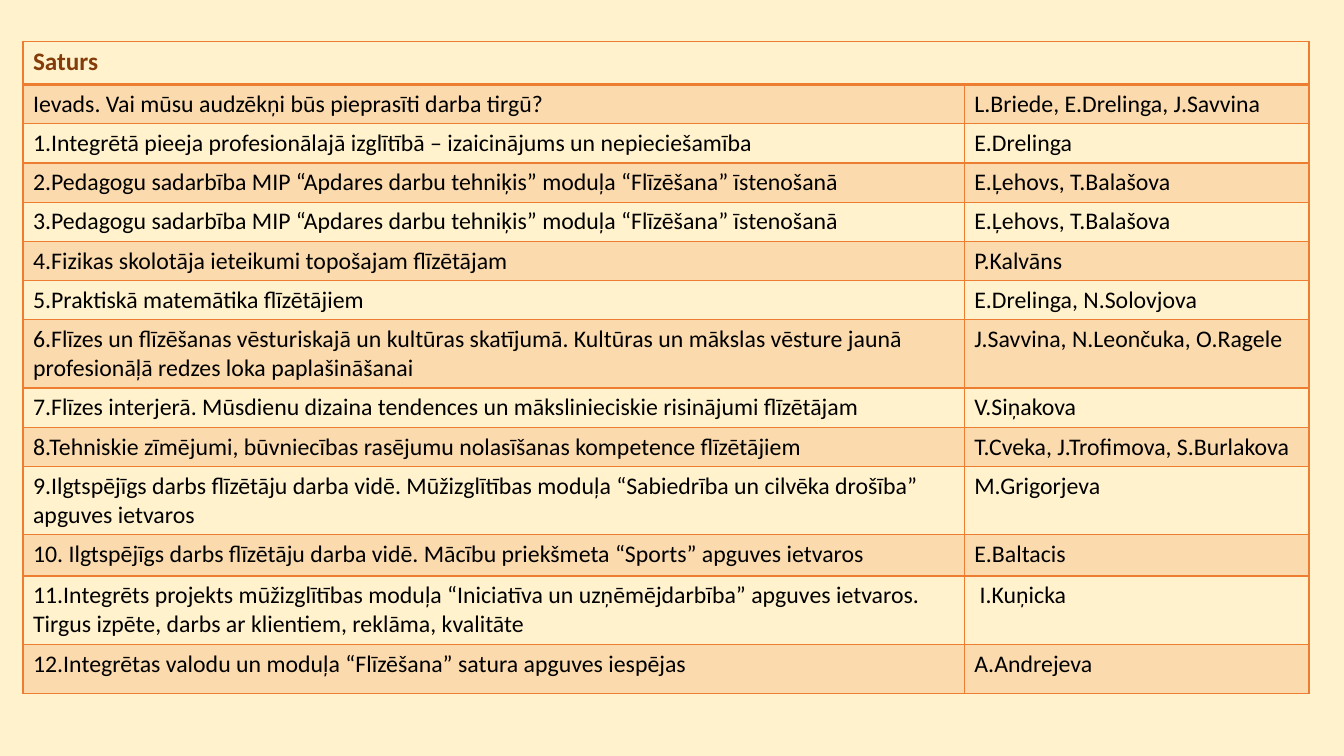
"""Build the contents slide: a two-column table of chapters and authors."""
from lxml import etree
from pptx import Presentation
from pptx.dml.color import RGBColor
from pptx.oxml import ns
from pptx.util import Cm, Pt

COLORS = {"paper": "FFF2CC", "accent": "ED7D31", "title": "843C0B", "body": "000000"}
TITLE = "Saturs"
CHAPTERS = [
    ("Ievads. Vai mūsu audzēkņi būs pieprasīti darba tirgū?", "L.Briede, E.Drelinga, J.Savvina"),
    ("1.Integrētā pieeja profesionālajā izglītībā – izaicinājums un nepieciešamība", "E.Drelinga"),
    ("2.Pedagogu sadarbība MIP “Apdares darbu tehniķis” moduļa “Flīzēšana” īstenošanā",
     "E.Ļehovs, T.Balašova"),
    ("3.Pedagogu sadarbība MIP “Apdares darbu tehniķis” moduļa “Flīzēšana” īstenošanā",
     "E.Ļehovs, T.Balašova"),
    ("4.Fizikas skolotāja ieteikumi topošajam flīzētājam", "P.Kalvāns"),
    ("5.Praktiskā matemātika flīzētājiem", "E.Drelinga, N.Solovjova"),
    ("6.Flīzes un flīzēšanas vēsturiskajā un kultūras skatījumā. Kultūras un mākslas vēsture "
     "jaunā profesionāļā redzes loka paplašināšanai", "J.Savvina, N.Leončuka, O.Ragele"),
    ("7.Flīzes interjerā. Mūsdienu dizaina tendences un mākslinieciskie risinājumi flīzētājam",
     "V.Siņakova"),
    ("8.Tehniskie zīmējumi, būvniecības rasējumu nolasīšanas kompetence flīzētājiem",
     "T.Cveka, J.Trofimova, S.Burlakova"),
    ("9.Ilgtspējīgs darbs flīzētāju darba vidē. Mūžizglītības moduļa “Sabiedrība un cilvēka "
     "drošība” apguves ietvaros", "M.Grigorjeva"),
    ("10. Ilgtspējīgs darbs flīzētāju darba vidē. Mācību priekšmeta “Sports” apguves ietvaros",
     "E.Baltacis"),
    ("11.Integrēts projekts mūžizglītības moduļa “Iniciatīva un uzņēmējdarbība” apguves "
     "ietvaros. Tirgus izpēte, darbs ar klientiem, reklāma, kvalitāte", " I.Kuņicka"),
    ("12.Integrētas valodu un moduļa “Flīzēšana” satura apguves iespējas", "A.Andrejeva"),
]
LEFT, TOP = 0.58, 1.04
COL_WIDTHS = [23.72, 8.69]
LINE_HEIGHT = 0.91
TALL_ROWS = {0: 1.09, 7: 1.63, 10: 1.57, 11: 1.04, 12: 1.57, 13: 1.24}
TITLE_FONT = {"name": "Calibri", "size": Pt(18), "bold": True}
BODY_FONT = {"name": "Calibri", "size": Pt(17), "bold": False}


def rgb(key):
    """Return the named colour."""
    return RGBColor.from_string(COLORS[key])


def add_borders(cell, widths):
    """Draw accent lines on the cell's sides, widths in points."""
    tc_pr = cell._tc.get_or_add_tcPr()
    for side, width in widths.items():
        ln = etree.SubElement(tc_pr, ns.qn(f"a:ln{side}"), w=str(Pt(width)))
        fill = etree.SubElement(ln, ns.qn("a:solidFill"))
        etree.SubElement(fill, ns.qn("a:srgbClr"), val=COLORS["accent"])


def fill_cell(cell, banded):
    """Tint a banded cell and leave the others clear."""
    if not banded:
        cell.fill.background()
        return
    cell.fill.solid()
    cell.fill.fore_color.rgb = rgb("accent")
    color = cell._tc.tcPr.find(".//" + ns.qn("a:solidFill") + "[last()]")
    color = cell._tc.tcPr.find(ns.qn("a:solidFill"))[0]
    etree.SubElement(color, ns.qn("a:alpha"), val="20000")


def write_cell(cell, words, font, color):
    """Write one run of formatted text."""
    r = cell.text_frame.paragraphs[0].add_run()
    r.text = words
    for name, value in font.items():
        setattr(r.font, name, value)
    r.font.color.rgb = rgb(color)


def main():
    """Create and save the slide."""
    prs = Presentation()
    prs.slide_width, prs.slide_height = Cm(33.87), Cm(19.05)
    s = prs.slides.add_slide(prs.slide_layouts[6])
    s.background.fill.solid()
    s.background.fill.fore_color.rgb = rgb("paper")

    rows = [(TITLE, "")] + CHAPTERS
    heights = [TALL_ROWS.get(i, LINE_HEIGHT) for i in range(len(rows))]
    table = s.shapes.add_table(len(rows), len(COL_WIDTHS), Cm(LEFT), Cm(TOP),
                               Cm(sum(COL_WIDTHS)), Cm(sum(heights))).table
    table.first_row = table.horz_banding = False
    for col, width in zip(table.columns, COL_WIDTHS):
        col.width = Cm(width)
    table.cell(0, 0).merge(table.cell(0, 1))

    for i, (row, height, entry) in enumerate(zip(table.rows, heights, rows)):
        row.height = Cm(height)
        font, color = (BODY_FONT, "body") if i else (TITLE_FONT, "title")
        for cell, words in zip(row.cells, entry):
            add_borders(cell, {"L": 1, "R": 1, "T": 1, "B": 1 if i else 2})
            fill_cell(cell, i % 2 == 1)
            if words:
                write_cell(cell, words, font, color)

    prs.save("out.pptx")


if __name__ == "__main__":
    main()
